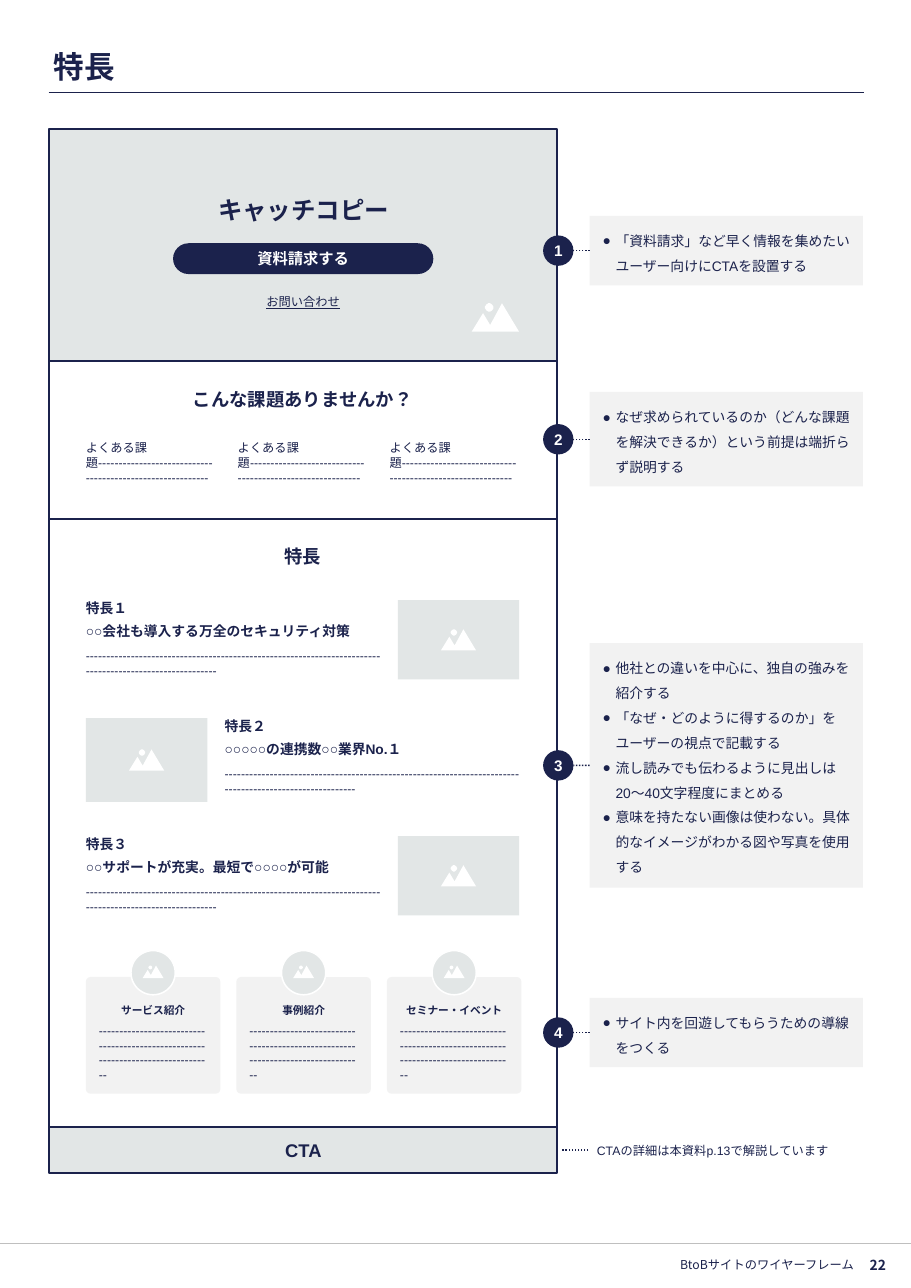
"""Build the wireframe guide page for the features section."""
import math

import pptx
import pptx.dml.color
import pptx.enum.dml
import pptx.enum.lang
import pptx.enum.shapes
import pptx.enum.text
import pptx.oxml
import pptx.oxml.ns
import pptx.util

Cm = pptx.util.Cm
Pt = pptx.util.Pt
SHAPE = pptx.enum.shapes.MSO_SHAPE
ALIGN = pptx.enum.text.PP_ALIGN
ANCHOR = pptx.enum.text.MSO_ANCHOR
NAVY, GRAY, PALE, WHITE = "1B224C", "E2E6E6", "F2F2F2", "FFFFFF"
NAMESPACE = pptx.oxml.ns.nsdecls("a")

deck = pptx.Presentation()
deck.slide_width, deck.slide_height = Cm(21), Cm(29.7)
page = deck.slides.add_slide(deck.slide_layouts[6])


def paint(fill, color):
    if color is None:
        fill.background()
    else:
        fill.solid()
        fill.fore_color.rgb = pptx.dml.color.RGBColor.from_string(color)


def add_box(text, left, top, width, height, kind=None, fill=None, line=None, line_width=1.25,
            radius=None, size=8, bold=False, underline=False, color=NAVY, font="Arial",
            align=ALIGN.LEFT, middle=False, insets=(0, 0, 0, 0), wrap=True,
            after=0, bullet=False):
    place = Cm(left), Cm(top), Cm(width), Cm(height)
    if kind is None:
        box = page.shapes.add_textbox(*place)
    else:
        box = page.shapes.add_shape(kind, *place)
        box.shadow.inherit = False
        paint(box.fill, fill)
        paint(box.line.fill, line)
        if line:
            box.line.width = Pt(line_width)
        if radius is not None:
            box.adjustments[0] = radius
    if not text:
        return box
    frame = box.text_frame
    frame.word_wrap = wrap
    frame.vertical_anchor = ANCHOR.MIDDLE if middle else ANCHOR.TOP
    frame.margin_left, frame.margin_top, frame.margin_right, frame.margin_bottom = map(Cm, insets)
    for number, words in enumerate(text.split("\n")):
        para = frame.add_paragraph() if number else frame.paragraphs[0]
        para.alignment = align
        if bullet:
            properties = para._p.get_or_add_pPr()
            properties.set("marL", str(Cm(0.3)))
            properties.set("indent", str(-Cm(0.3)))
            for xml in (f'<a:buClr {NAMESPACE}><a:srgbClr val="{NAVY}"/></a:buClr>',
                        f'<a:buFont {NAMESPACE} typeface="Arial"/>',
                        f'<a:buChar {NAMESPACE} char="●"/>'):
                properties.append(pptx.oxml.parse_xml(xml))
            para.line_spacing = 1.5
        if after:
            para.space_after = Pt(after)
        span = para.add_run()
        span.text = words
        span.font.name, span.font.size, span.font.bold = font, Pt(size), bold
        span.font.language_id = pptx.enum.lang.MSO_LANGUAGE_ID.JAPANESE
        if underline:
            span.font.underline = True
        paint(span.font.fill, color)
        span.font._rPr.find(pptx.oxml.ns.qn("a:latin")).addnext(
            pptx.oxml.parse_xml(f'<a:ea {NAMESPACE} typeface="{font}"/>'))
    return box


rules = [(1.12, 2.13, 19.91, NAVY, 1, None), (0, 28.68, 21, "BFBFBF", 0.5, None)]
icons = []

margin = (0.1, 0.1, 0.1, 0.1)
add_box("特長", 1.14, 0.99, 18.69, 1.07, size=20, bold=True, middle=True, insets=margin)
add_box("BtoBサイトのワイヤーフレーム", 12.7, 28.91, 7.09, 0.51, font="Noto Sans CJK JP",
        align=ALIGN.RIGHT, middle=True, insets=margin)
add_box("22", 19.84, 28.91, 0.79, 0.51, size=9, bold=True, font="Noto Sans CJK JP",
        align=ALIGN.CENTER, middle=True, insets=margin, wrap=False)

for text, top, height, fill in (("", 11.96, 14.04, None), ("", 2.97, 5.36, GRAY),
                                ("", 8.33, 3.63, None), ("CTA", 25.99, 1.06, GRAY)):
    add_box(text, 1.14, top, 11.71, height, kind=SHAPE.RECTANGLE, fill=fill, line=NAVY,
            size=12, bold=True, align=ALIGN.CENTER, middle=True, insets=(0.5, 0.5, 0.5, 0.5))

add_box("キャッチコピー", 2, 4.47, 10, 0.71, size=16, bold=True, align=ALIGN.CENTER, middle=True)
add_box("資料請求する", 3.99, 5.61, 6, 0.71, kind=SHAPE.ROUNDED_RECTANGLE, fill=NAVY, radius=0.5,
        size=10, bold=True, color=WHITE, align=ALIGN.CENTER, middle=True, insets=(0, 0.1, 0, 0.1))
add_box("お問い合わせ", 3.99, 6.71, 6, 0.51, underline=True, align=ALIGN.CENTER,
        middle=True, wrap=False)
icons.append((11.42, 7.32, 1.09))

for heading, top in (("こんな課題ありませんか？", 8.94), ("特長", 12.57)):
    add_box(heading, 1.98, top, 10, 0.61, size=12, bold=True, align=ALIGN.CENTER, after=4)

for column in range(3):
    add_box("よくある課題" + "-" * 58, 1.98 + 3.5 * column, 10.16, 3, 1.09)

features = [("特長１\n○○会社も導入する万全のセキュリティ対策", 1.98, 9.17, 1.83),
            ("特長２\n○○○○○の連携数○○業界No.１", 5.18, 1.98, 1.93),
            ("特長３\n○○サポートが充実。最短で○○○○が可能", 1.98, 9.17, 1.83)]
for row, (heading, text_left, image_left, image_height) in enumerate(features):
    top = 13.84 + 2.72 * row
    add_box("", image_left, top, 2.8, image_height, kind=SHAPE.RECTANGLE, fill=GRAY)
    add_box("-" * 104, text_left, top + 1.12, 6.81, 0.69, after=6)
    add_box(heading, text_left, top, 6.81, 0.99, size=9, bold=True, after=4)
    icons.append((image_left + 1.4, top + image_height / 2, 0.81))

for column, label in enumerate(("サービス紹介", "事例紹介", "セミナー・イベント")):
    left = 1.98 + 3.47 * column
    add_box("", left, 22.53, 3.1, 2.69, kind=SHAPE.ROUNDED_RECTANGLE, fill=PALE, radius=0.04)
    add_box("-" * 80, left + 0.3, 23.6, 2.5, 1.4)
    add_box("", left + 1.04, 21.92, 1.02, 1.02, kind=SHAPE.OVAL, fill=GRAY, line=WHITE, line_width=1)
    add_box(label, left + 0.3, 23.09, 2.5, 0.41, size=7, bold=True, align=ALIGN.CENTER, middle=True)
    icons.append((left + 1.55, 22.41, 0.48))

for center_x, center_y, width in icons:
    ring = [(37 + 9 * math.cos(step * math.pi / 16), 9 + 9 * math.sin(step * math.pi / 16))
            for step in range(32)]
    icon_path = page.shapes.build_freeform(*ring[0], scale=Cm(width) / 100)
    icon_path.add_line_segments(ring[1:])
    icon_path.move_to(64, 0)
    icon_path.add_line_segments([(100, 60), (0, 60), (24, 21), (39, 46)])
    icon = icon_path.convert_to_shape(Cm(center_x - width / 2), Cm(center_y - 0.3 * width))
    icon.shadow.inherit = False
    paint(icon.fill, WHITE)
    paint(icon.line.fill, None)

notes = [("「資料請求」など早く情報を集めたいユーザー向けにCTAを設置する", 4.98, 1.6),
         ("なぜ求められているのか（どんな課題を解決できるか）という前提は端折らず説明する", 9.04, 2.18),
         ("他社との違いを中心に、独自の強みを紹介する\n"
          "「なぜ・どのように得するのか」をユーザーの視点で記載する\n"
          "流し読みでも伝わるように見出しは20〜40文字程度にまとめる\n"
          "意味を持たない画像は使わない。具体的なイメージがわかる図や写真を使用する", 14.83, 5.64),
         ("サイト内を回遊してもらうための導線をつくる", 23.01, 1.6)]
for number, (text, top, height) in enumerate(notes, 1):
    middle_y = top + height / 2
    note = add_box(text, 13.59, top, 6.3, height, kind=SHAPE.RECTANGLE, fill=PALE, size=9,
                   insets=(0.3, 0.2, 0.3, 0.3), bullet=True)
    add_box(str(number), 12.52, middle_y - 0.35, 0.7, 0.7, kind=SHAPE.OVAL, fill=NAVY, size=10,
            bold=True, color=WHITE, align=ALIGN.CENTER, middle=True, wrap=False)
    rules.append((13.59, middle_y, 13.22, NAVY, 1, note))

add_box("CTAの詳細は本資料p.13で解説しています", 13.56, 26.26, 6.3, 0.51, insets=(0.2, 0.1, 0.2, 0.1))
rules.append((13.56, 26.52, 12.95, NAVY, 1, None))

for number, (start, height, end, color, width, note) in enumerate(rules):
    rule = page.shapes.add_connector(pptx.enum.shapes.MSO_CONNECTOR.STRAIGHT,
                                     Cm(start), Cm(height), Cm(end), Cm(height))
    if note is not None:
        rule.begin_connect(note, 1)
    paint(rule.line.fill, color)
    rule.line.width = Pt(width)
    if number > 1:
        rule.line.dash_style = pptx.enum.dml.MSO_LINE.ROUND_DOT
    rule._element.spPr.append(pptx.oxml.parse_xml(f"<a:effectLst {NAMESPACE}/>"))

deck.save("out.pptx")
